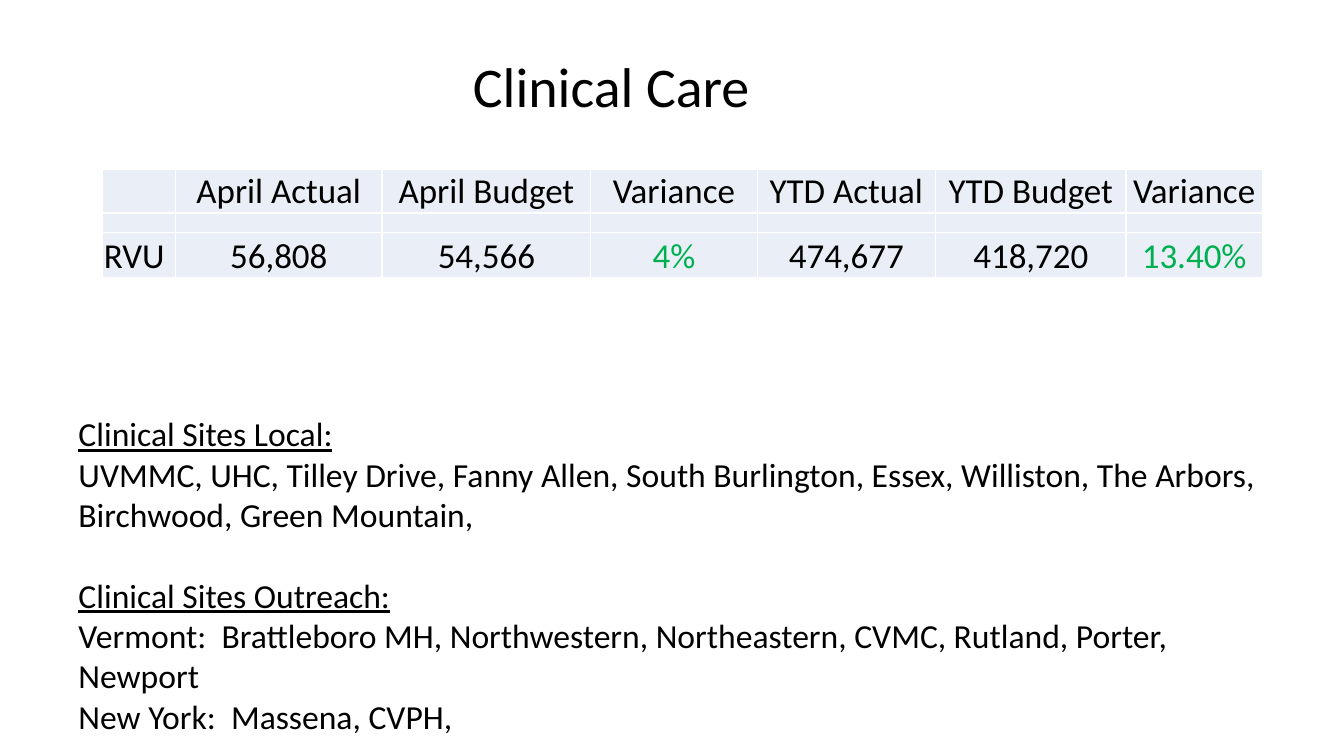
from lxml import etree
from pptx import Presentation
from pptx.dml.color import RGBColor
from pptx.enum.text import MSO_ANCHOR as Anchor, MSO_AUTO_SIZE as AutoSize, PP_ALIGN as Align
from pptx.oxml.ns import qn
from pptx.util import Inches, Pt

FONT = "Calibri"
BLACK, WHITE, GREEN, PALE_BLUE = "000000", "FFFFFF", "00B050", "EAEFF7"
TITLE_SIZE, TABLE_SIZE, SITES_SIZE, SPACER_SIZE = 40, 25, 24, 8
LINE_HEIGHT = 1.22

COLUMN_WIDTHS = [0.72, 2.05, 2.07, 1.65, 1.77, 1.89, 1.35]
ROW_HEIGHTS = [0.41, 0.19, 0.45]
TABLE_ROWS = [
    ["", "April Actual", "April Budget", "Variance", "YTD Actual", "YTD Budget", "Variance"],
    [""] * len(COLUMN_WIDTHS),
    ["RVU", "56,808", "54,566", "4%", "474,677", "418,720", "13.40%"],
]
CLINICAL_SITES = {
    "Clinical Sites Local:": [
        "UVMMC, UHC, Tilley Drive, Fanny Allen, South Burlington, Essex, Williston, "
        "The Arbors, Birchwood, Green Mountain,",
    ],
    "Clinical Sites Outreach:": [
        "Vermont:  Brattleboro MH, Northwestern, Northeastern, CVMC, Rutland, Porter, Newport",
        "New York:  Massena, CVPH,",
    ],
}


def color(hex_value):
    return RGBColor.from_string(hex_value)


def write(paragraph, text, size, hex_value=BLACK, underline=False):
    paragraph.text = text
    for run in paragraph.runs:
        run.font.name = FONT
        run.font.size = Pt(size)
        run.font.color.rgb = color(hex_value)
        run.font.underline = underline


def add_title(slide, text):
    title = slide.shapes.title
    title.left, title.top = Inches(4.59), Inches(0.46)
    title.width, title.height = Inches(2.97), Inches(0.77)
    frame = title.text_frame
    frame.word_wrap = False
    frame.auto_size = AutoSize.NONE
    frame.vertical_anchor = Anchor.TOP
    write(frame.paragraphs[0], text, TITLE_SIZE)
    frame.paragraphs[0].alignment = Align.LEFT


def set_borders(cell, hex_value, width):
    properties = cell._tc.get_or_add_tcPr()
    for index, side in enumerate(("lnL", "lnR", "lnT", "lnB")):
        line = etree.Element(qn(f"a:{side}"), w=str(Pt(width)))
        fill = etree.SubElement(line, qn("a:solidFill"))
        etree.SubElement(fill, qn("a:srgbClr"), val=hex_value)
        properties.insert(index, line)


def format_cell(cell, text):
    cell.fill.solid()
    cell.fill.fore_color.rgb = color(PALE_BLUE)
    set_borders(cell, WHITE, 1)
    cell.margin_left = cell.margin_right = cell.margin_top = Inches(0.01)
    cell.margin_bottom = 0
    cell.vertical_anchor = Anchor.BOTTOM
    paragraph = cell.text_frame.paragraphs[0]
    paragraph.alignment = Align.LEFT if text == "RVU" else Align.CENTER
    if text:
        write(paragraph, text, TABLE_SIZE, GREEN if text.endswith("%") else BLACK)
    else:
        etree.SubElement(paragraph._p, qn("a:endParaRPr"), sz=str(SPACER_SIZE * 100))


def add_volume_table(slide):
    frame = slide.shapes.add_table(
        len(ROW_HEIGHTS), len(COLUMN_WIDTHS), Inches(1.02), Inches(1.68),
        Inches(sum(COLUMN_WIDTHS)), Inches(sum(ROW_HEIGHTS)))
    table = frame.table
    for column, width in zip(table.columns, COLUMN_WIDTHS):
        column.width = Inches(width)
    for row, height, texts in zip(table.rows, ROW_HEIGHTS, TABLE_ROWS):
        row.height = Inches(height)
        for cell, text in zip(row.cells, texts):
            format_cell(cell, text)


def add_sites(slide):
    box = slide.shapes.add_textbox(Inches(0.68), Inches(4.05), Inches(12.15), Inches(3.34))
    frame = box.text_frame
    frame.word_wrap = True
    paragraph = frame.paragraphs[0]
    for index, (heading, lines) in enumerate(CLINICAL_SITES.items()):
        if index:
            paragraph = frame.add_paragraph()
            paragraph.space_before = Pt(round(SITES_SIZE * LINE_HEIGHT))
        write(paragraph, heading, SITES_SIZE, underline=True)
        for line in lines:
            write(frame.add_paragraph(), line, SITES_SIZE)


def main():
    presentation = Presentation()
    presentation.slide_width, presentation.slide_height = Inches(13.33), Inches(7.5)
    title_only = presentation.slide_layouts.get_by_name("Title Only")
    slide = presentation.slides.add_slide(title_only)
    add_title(slide, "Clinical Care")
    add_volume_table(slide)
    add_sites(slide)
    presentation.save("out.pptx")


if __name__ == "__main__":
    main()
